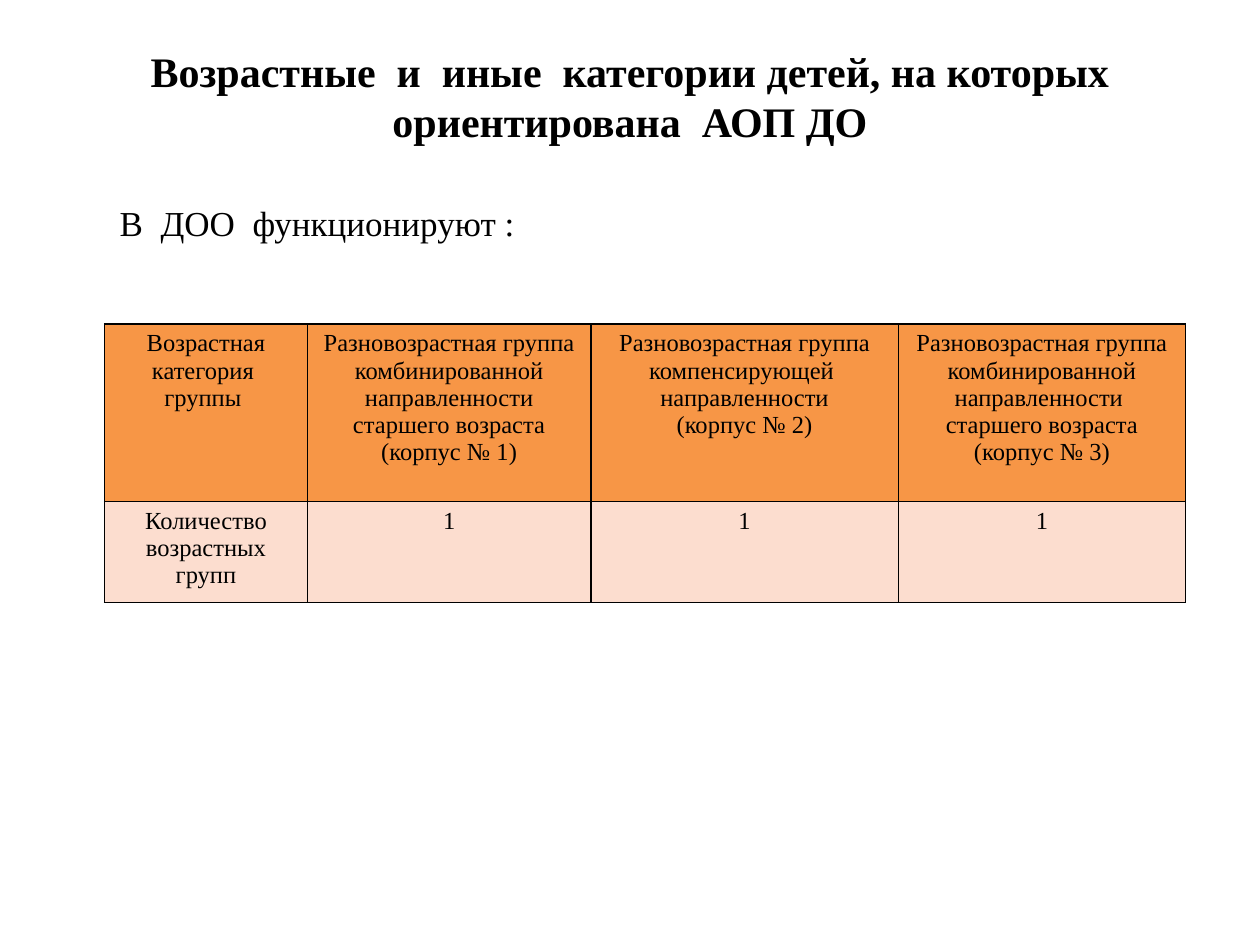
import pptx
import pptx.dml.color
import pptx.enum.text
import pptx.oxml
import pptx.oxml.ns
import pptx.util

Inches = pptx.util.Inches
ALIGN = pptx.enum.text.PP_ALIGN
ANCHOR = pptx.enum.text.MSO_ANCHOR

TITLE = "Возрастные  и  иные  категории детей, на которых ориентирована  АОП ДО"
INTRO = "В  ДОО  функционируют :"
GROUPS = [
    ["Возрастная категория  группы ",
     "Разновозрастная группа комбинированной направленности\nстаршего возраста\n(корпус № 1)",
     "Разновозрастная группа компенсирующей  направленности\n(корпус № 2)",
     "Разновозрастная группа комбинированной направленности \nстаршего возраста\n(корпус № 3)"],
    ["Количество возрастных групп", "1", "1", "1"],
]
COLUMN_WIDTHS = [1.61, 2.25, 2.44, 2.28]
ROW_HEIGHTS = [1.41, 0.75]
ROW_FILLS = ["F79646", "FCDDCF"]


def color(value):
    return pptx.dml.color.RGBColor.from_string(value)


def write(frame, text, size, align=ALIGN.CENTER, bold=False):
    frame.word_wrap = True
    frame.text = text
    for paragraph in frame.paragraphs:
        paragraph.alignment = align
        for run in paragraph.runs:
            run.font.name = "Times New Roman"
            run.font.size = pptx.util.Pt(size)
            run.font.bold = bold
            run.font.color.rgb = color("000000")


def add_text(slide, box, text, anchor=ANCHOR.TOP, indent=0.1, **text_format):
    frame = slide.shapes.add_textbox(*map(Inches, box)).text_frame
    frame.vertical_anchor = anchor
    frame.margin_left = Inches(indent)
    write(frame, text, **text_format)


def draw_borders(cell):
    """Outline a cell in black; borders must precede the fill in tcPr."""
    properties = cell._tc.get_or_add_tcPr()
    for position, side in enumerate(("lnL", "lnR", "lnT", "lnB")):
        properties.insert(position, pptx.oxml.parse_xml(
            f'<a:{side} {pptx.oxml.ns.nsdecls("a")} w="{pptx.util.Pt(1)}">'
            f'<a:solidFill><a:srgbClr val="000000"/></a:solidFill></a:{side}>'))


def add_groups_table(slide, left, top):
    table = slide.shapes.add_table(
        len(GROUPS), len(COLUMN_WIDTHS), Inches(left), Inches(top),
        Inches(sum(COLUMN_WIDTHS)), Inches(sum(ROW_HEIGHTS))).table
    for column, width in zip(table.columns, COLUMN_WIDTHS):
        column.width = Inches(width)
    for row, height, fill, texts in zip(table.rows, ROW_HEIGHTS, ROW_FILLS, GROUPS):
        row.height = Inches(height)
        for cell, text in zip(row.cells, texts):
            write(cell.text_frame, text, size=14)
            cell.fill.solid()
            cell.fill.fore_color.rgb = color(fill)
            draw_borders(cell)


def main():
    deck = pptx.Presentation()
    deck.slide_width, deck.slide_height = Inches(10), Inches(7.5)
    slide = deck.slides.add_slide(deck.slide_layouts[6])
    add_text(slide, (0.75, 0.21, 8.5, 1.1), TITLE,
             anchor=ANCHOR.MIDDLE, size=24, bold=True)
    add_text(slide, (0.43, 1.55, 9.21, 0.79), INTRO,
             indent=0.52, size=20, align=ALIGN.LEFT)
    add_groups_table(slide, 0.83, 2.57)
    deck.save("out.pptx")


if __name__ == "__main__":
    main()
